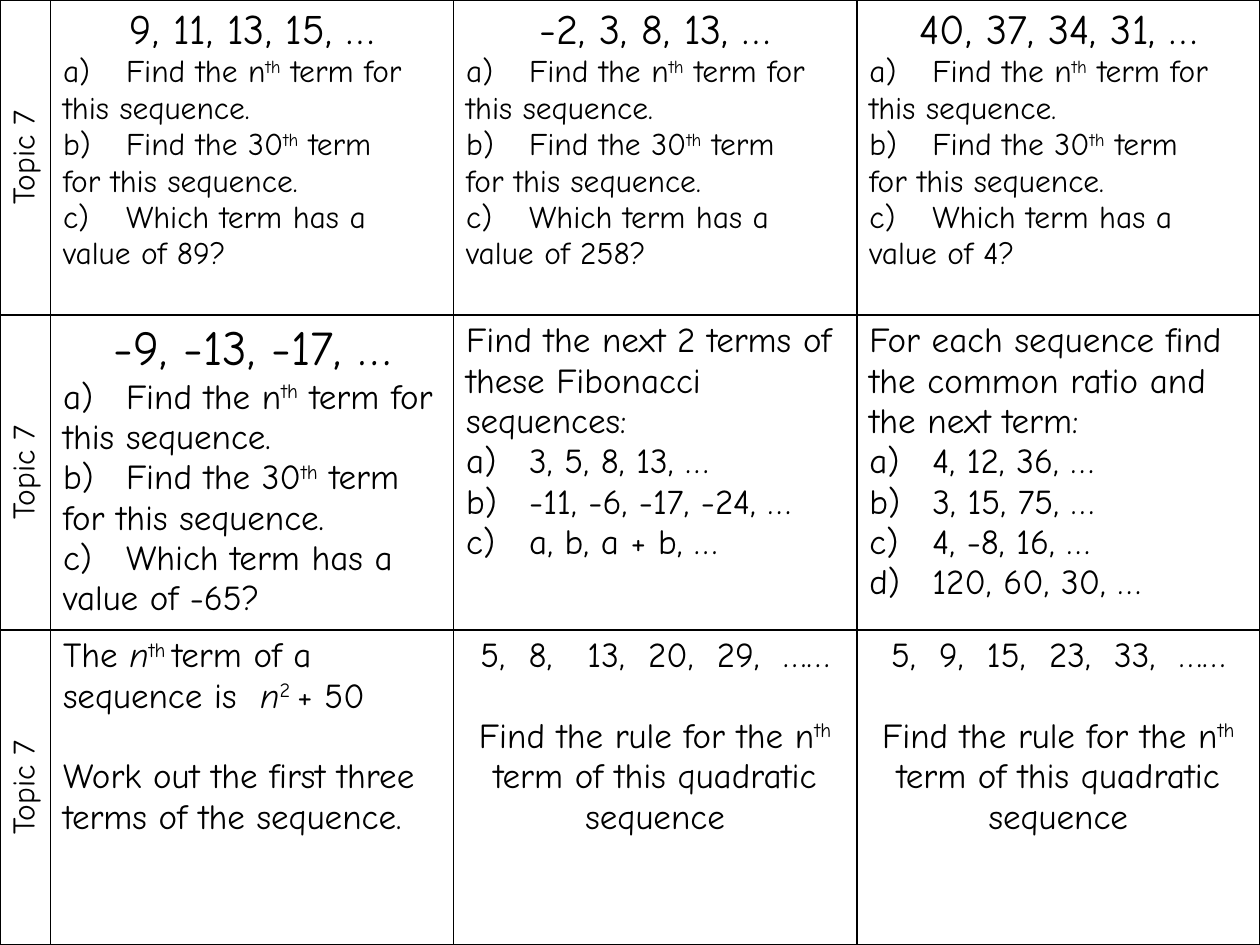
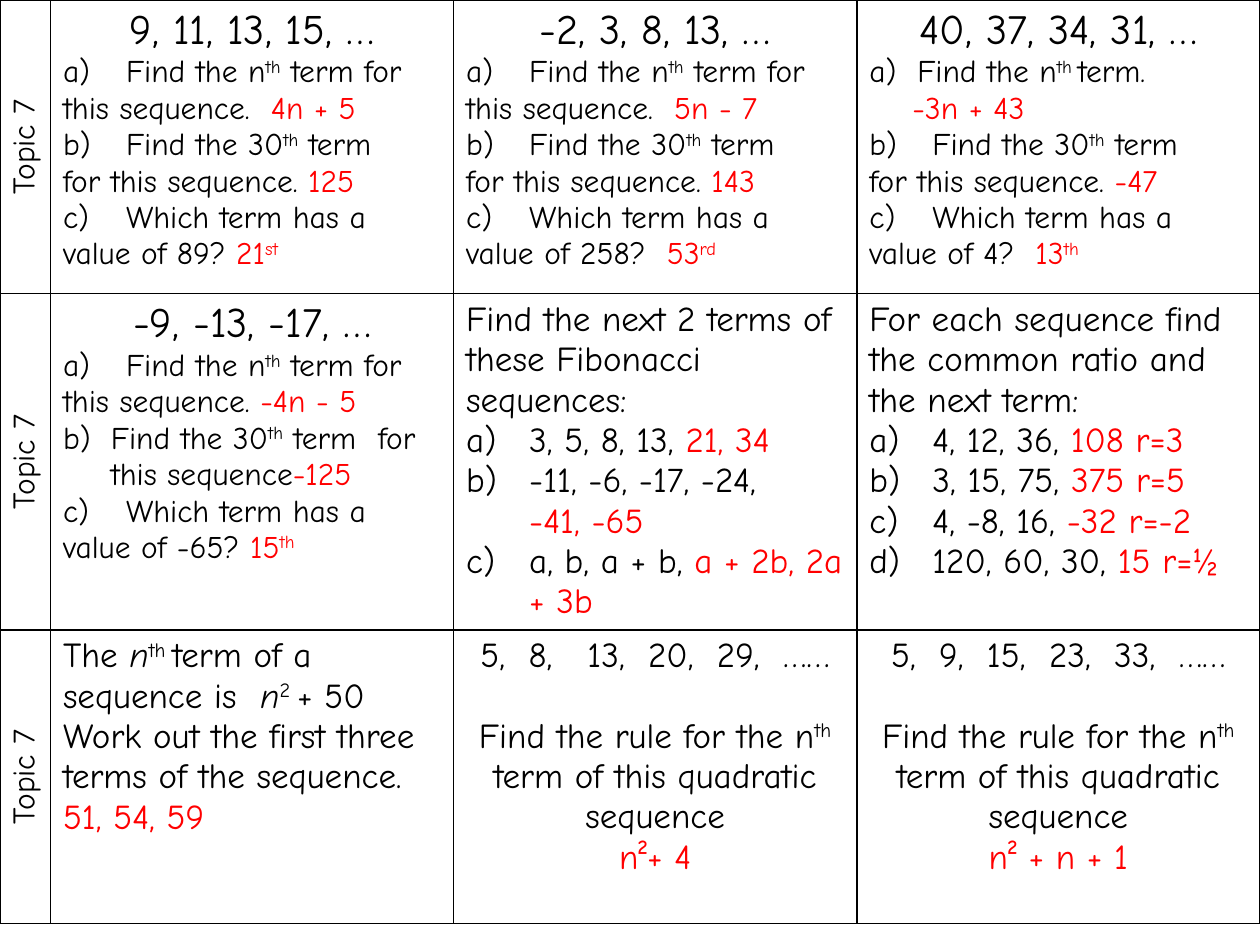
"""Build a question grid on sequences and the same grid with its answers."""
from copy import deepcopy
from dataclasses import dataclass

from lxml.etree import SubElement
from pptx import Presentation
from pptx.dml.color import RGBColor
from pptx.enum.text import PP_ALIGN
from pptx.oxml.ns import qn
from pptx.util import Inches, Pt

FONT, INK, ANSWER, PAPER = "Comic Neue", "000000", "FF0000", "FFFFFF"
TOPIC = "Topic 7"
COLUMNS = [0.4, 3.2, 3.2, 3.2]
ROWS = {False: [2.5, 2.5, 2.5], True: [2.33, 2.67, 2.33]}
TAB = 0.4
BLANK_LINE = 23

ARITHMETIC = [
    ("9, 11, 13, 15, …", "89?", "  [4n + 5]", " [125]", " [21^st^]"),
    ("-2, 3, 8, 13, …", "258?", "  [5n - 7]", " [143]", "  [53^rd^]"),
    ("40, 37, 34, 31, …", "4?", "[-3n + 43]", " [-47]", "  [13^th^]"),
    ("-9, -13, -17, …", "-65?", " [-4n - 5]", "[-125]", " [15^th^]"),
]
LISTS = [
    ("Find the next 2 terms of these Fibonacci sequences:",
     [("3, 5, 8, 13, ", "[21, 34]"),
      ("-11, -6, -17, -24, ", "\v[-41, -65]"),
      ("a, b, a + b, ", "[a + 2b, 2a + 3b]")]),
    ("For each sequence find the common ratio and the next term:",
     [("4, 12, 36, ", "[108 r=3]"),
      ("3, 15, 75, ", "[375 r=5]"),
      ("4, -8, 16, ", "[-32 r=-2]"),
      ("120, 60, 30, ", "[15 r=½]")]),
]
FORMULA = ("The _n_^th ^term of a sequence is  _n_^2 ^+ 50",
           "Work out the first three terms of the sequence.", "\v[51, 54, 59]")
QUADRATIC_TASK = "Find the rule for the n^th^ term of this quadratic sequence"
QUADRATICS = [("5,  8,   13,  20,  29,  ……", "[n²+ 4]"),
              ("5,  9,  15,  23,  33,  ……", "[n² + n + 1]")]


@dataclass
class Para:
    """A paragraph: ^raised^, _italic_ and [answer] mark its runs."""
    text: str
    size: int = 20
    centred: bool = False
    left: float = 0
    hang: float = 0
    start: int = 1
    gap: int = 0


def arithmetic_cell(index, answers):
    """Return the three-part question on one arithmetic sequence."""
    terms, value, rule, thirtieth, place = ARITHMETIC[index]
    large = index == 3 and not answers
    head, body = (28, 20) if large else (24, 18)
    if not answers:
        rule = thirtieth = place = ""
    part_a = [Para(f"a)\tFind the n^th^ term for\vthis sequence.{rule}", body)]
    part_b = Para(f"b)\tFind the 30^th^ term\vfor this sequence.{thirtieth}", body)
    if answers and index == 2:
        part_a = [Para("Find the n^th ^term.", body, hang=0.38), Para(rule, body, left=0.34)]
    if answers and index == 3:
        part_b = Para(f"Find the 30^th^ term \tfor this sequence{thirtieth}",
                      body, hang=0.38, start=2)
    part_c = Para(f"c)\tWhich term has a\vvalue of {value}{place}", body)
    return [Para(terms, head, centred=True), *part_a, part_b, part_c]


def list_cell(task, items, answers):
    """Return a task with its lettered sequences."""
    return [Para(task)] + [Para(terms + (found if answers else "…"), hang=0.5)
                           for terms, found in items]


def formula_cell(answers):
    """Return the question that starts from a given nth term."""
    rule, task, found = FORMULA
    return [Para(rule), Para(task + found) if answers else Para(task, gap=BLANK_LINE)]


def quadratic_cell(terms, rule, answers):
    """Return the question on one quadratic sequence."""
    cell = [Para(terms, centred=True), Para(QUADRATIC_TASK, centred=True, gap=BLANK_LINE)]
    return cell + [Para(rule, centred=True)] * answers


def grid(answers):
    """Return the paragraphs of each cell, row by row."""
    rows = [
        [arithmetic_cell(i, answers) for i in range(3)],
        [arithmetic_cell(3, answers)] + [list_cell(*entry, answers) for entry in LISTS],
        [formula_cell(answers)] + [quadratic_cell(*entry, answers) for entry in QUADRATICS],
    ]
    return [[[Para(TOPIC, 18, centred=True)], *row] for row in rows]


def rgb(value):
    """Turn a hex string into a colour."""
    return RGBColor.from_string(value)


def add_run(p, text, size, raised, italic, answer):
    """Add one formatted run if it has text."""
    if not text:
        return
    r = p.add_run()
    r.text = text
    r.font.name, r.font.size = FONT, Pt(size)
    r.font.color.rgb = rgb(ANSWER if answer else INK)
    if italic:
        r.font.italic = True
    if raised:
        r.font._element.set("baseline", "30000")


def write(p, para):
    """Fill a paragraph from its marked-up text."""
    p.alignment = PP_ALIGN.CENTER if para.centred else PP_ALIGN.LEFT
    if para.gap:
        p.space_before = Pt(para.gap)
    pPr = p._p.get_or_add_pPr()
    pPr.set("marL", str(Inches(para.left + para.hang)))
    pPr.set("indent", str(-Inches(para.hang)))
    if para.hang:
        number = SubElement(pPr, qn("a:buAutoNum"), type="alphaLcParenR")
        if para.start > 1:
            number.set("startAt", str(para.start))
    if "\t" in para.text:
        stops = SubElement(pPr, qn("a:tabLst"))
        SubElement(stops, qn("a:tab"), pos=str(Inches(TAB)), algn="l")
    raised = italic = answer = False
    text = ""
    for char in para.text:
        if char not in "^_[]\v":
            text += char
            continue
        add_run(p, text, para.size, raised, italic, answer)
        text = ""
        if char == "^":
            raised = not raised
        elif char == "_":
            italic = not italic
        elif char == "\v":
            p.add_line_break()
        else:
            answer = char == "["
    add_run(p, text, para.size, raised, italic, answer)
    for br in p._p.findall(qn("a:br")):
        br.append(deepcopy(p.runs[0]._r.rPr))


def add_borders(cell):
    """Draw a thin line on all four sides of a cell."""
    tcPr = cell._tc.get_or_add_tcPr()
    for i, side in enumerate("LRTB"):
        ln = SubElement(tcPr, qn(f"a:ln{side}"), w=str(Pt(1)))
        fill = SubElement(ln, qn("a:solidFill"))
        SubElement(fill, qn("a:srgbClr"), val=INK)
        tcPr.insert(i, ln)


def add_grid(prs, answers):
    """Add a slide that holds the question table."""
    slide = prs.slides.add_slide(prs.slide_layouts[6])
    heights = ROWS[answers]
    table = slide.shapes.add_table(len(heights), len(COLUMNS), 0, 0, prs.slide_width,
                                   Inches(sum(heights))).table
    table.first_row = table.horz_banding = False
    for column, width in zip(table.columns, COLUMNS):
        column.width = Inches(width)
    for row, height, contents in zip(table.rows, heights, grid(answers)):
        row.height = Inches(height)
        for cell, paras in zip(row.cells, contents):
            cell.fill.solid()
            cell.fill.fore_color.rgb = rgb(PAPER)
            add_borders(cell)
            tf = cell.text_frame
            for i, para in enumerate(paras):
                write(tf.add_paragraph() if i else tf.paragraphs[0], para)
        row.cells[0]._tc.tcPr.set("vert", "vert270")


def main():
    """Build both slides and save them."""
    prs = Presentation()
    prs.slide_width, prs.slide_height = Inches(10), Inches(7.5)
    for answers in (False, True):
        add_grid(prs, answers)
    prs.save("out.pptx")


if __name__ == "__main__":
    main()
